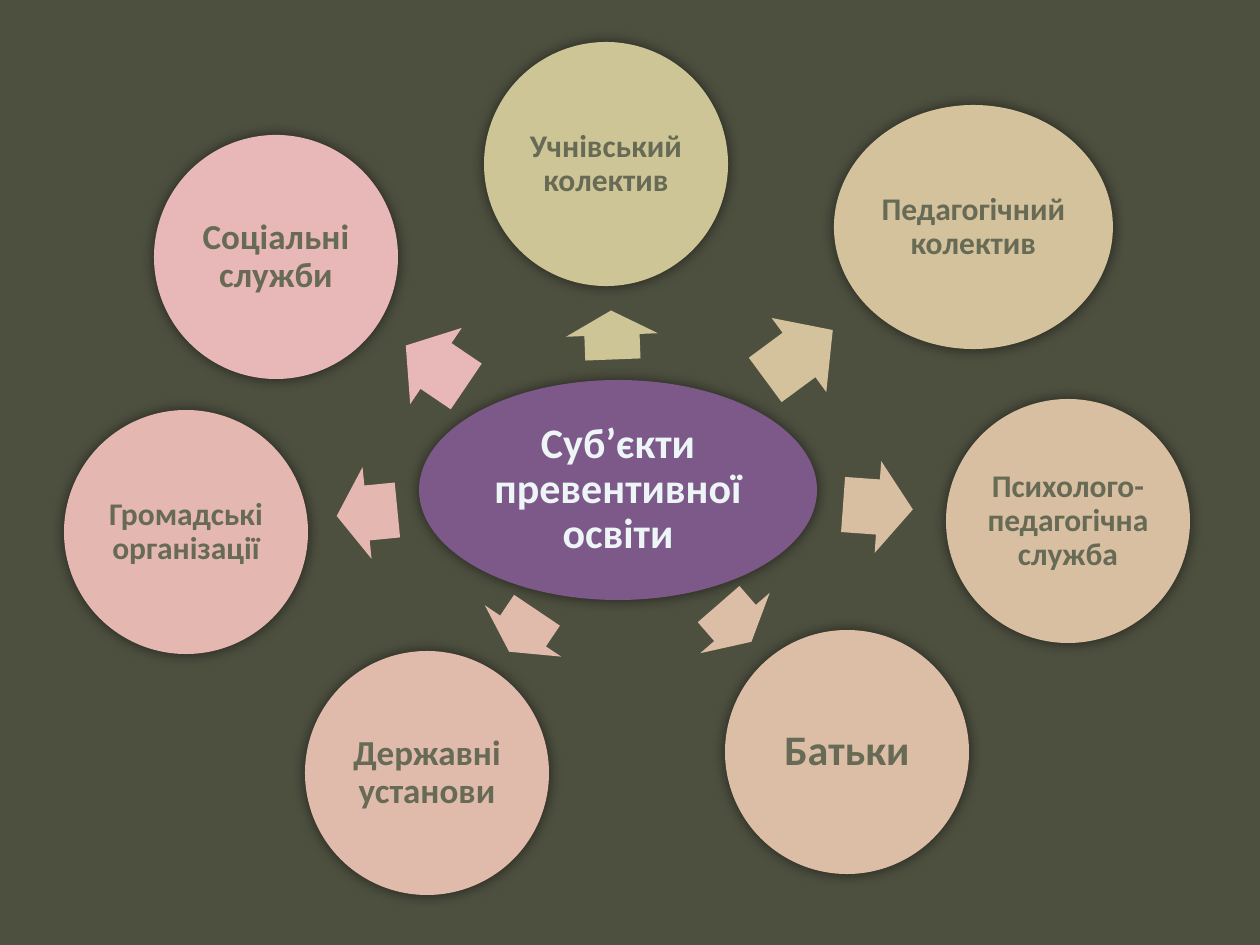
from lxml.etree import SubElement
from pptx import Presentation
from pptx.dml.color import RGBColor
from pptx.enum.shapes import MSO_SHAPE as SHAPE
from pptx.enum.text import MSO_ANCHOR as ANCHOR, PP_ALIGN as ALIGN
from pptx.oxml.ns import qn
from pptx.util import Emu, Pt

PX_PER_INCH = 126
CIRCLE = 244
ARROW_HEIGHT = 92
TEXT_INSET = 4

# text, font size, colour, circle box, arrow (centre x, centre y, length, angle)
SUBJECTS = [
    ("Учнівський колектив", 18, "CEC597", (484, 42, CIRCLE, CIRCLE), (612, 335, 49, 267.8)),
    ("Педагогічний колектив", 18, "D3C29C", (834, 105, 279, CIRCLE), (799, 355, 84, 323.6)),
    ("Психолого-педагогічна служба", 18, "D8BFA1", (946, 399, CIRCLE, CIRCLE), (878, 507, 70, 4.1)),
    ("Батьки", 24, "DCBDA6", (725, 630, CIRCLE, CIRCLE), (735, 623, 50, 49)),
    ("Державні установи", 20, "E0BAAB", (305, 651, CIRCLE, CIRCLE), (523, 631, 50, 123.9)),
    ("Громадські організації", 18, "E4B8B1", (64, 410, CIRCLE, CIRCLE), (367, 513, 61, 174.4)),
    ("Соціальні служби", 20, "E8B7B7", (154, 135, CIRCLE, CIRCLE), (436, 366, 73, 214.1)),
]


def px(length):
    return Emu(round(length * 914400 / PX_PER_INCH))


def rgb(color):
    return RGBColor.from_string(color)


def paint(fill, color):
    fill.solid()
    fill.fore_color.rgb = rgb(color)


def add_figure(slide, kind, box, color):
    figure = slide.shapes.add_shape(kind, *map(px, box))
    figure.shadow.inherit = False
    paint(figure.fill, color)
    figure.line.fill.background()
    return figure


def add_glow_shadow(figure):
    """Add a soft black shadow with no offset."""
    effects = figure._element.spPr.find(qn("a:effectLst"))
    shadow = SubElement(effects, qn("a:outerShdw"), blurRad=str(int(Pt(7.5))), dist="0", dir="0")
    black = SubElement(shadow, qn("a:srgbClr"), val="000000")
    SubElement(black, qn("a:alpha"), val="50000")


def write_text(figure, text, *, size, color, bold=True, font="Calibri"):
    frame = figure.text_frame
    frame.word_wrap = True
    frame.vertical_anchor = ANCHOR.MIDDLE
    frame.margin_left = frame.margin_right = px(TEXT_INSET)
    frame.margin_top = frame.margin_bottom = px(TEXT_INSET)
    paragraph = frame.paragraphs[0]
    paragraph.alignment = ALIGN.CENTER
    paragraph.line_spacing = 0.9
    run = paragraph.add_run()
    run.text = text
    run.font.name = font
    run.font.size = Pt(size)
    run.font.bold = bold
    run.font.color.rgb = rgb(color)


def add_oval(slide, box, fill_color, text, **text_format):
    oval = add_figure(slide, SHAPE.OVAL, box, fill_color)
    add_glow_shadow(oval)
    write_text(oval, text, **text_format)


def add_arrow(slide, center_x, center_y, length, angle, color):
    box = (center_x - length / 2, center_y - ARROW_HEIGHT / 2, length, ARROW_HEIGHT)
    arrow = add_figure(slide, SHAPE.RIGHT_ARROW, box, color)
    arrow.adjustments[0] = 0.6
    arrow.adjustments[1] = 0.5
    arrow.rotation = angle


def add_subjects_diagram(slide):
    add_oval(slide, (419, 380, 398, 220), "7C5989", "Суб’єкти превентивної освіти",
             size=24, color="EDF5F7")
    for text, size, color, box, arrow in SUBJECTS:
        add_arrow(slide, *arrow, color)
        add_oval(slide, box, color, text, size=size, color="676A55")


def main():
    deck = Presentation()
    deck.slide_width, deck.slide_height = px(1260), px(945)
    slide = deck.slides.add_slide(deck.slide_layouts[6])
    paint(slide.background.fill, "4D4F3F")
    add_subjects_diagram(slide)
    deck.save("out.pptx")


if __name__ == "__main__":
    main()
